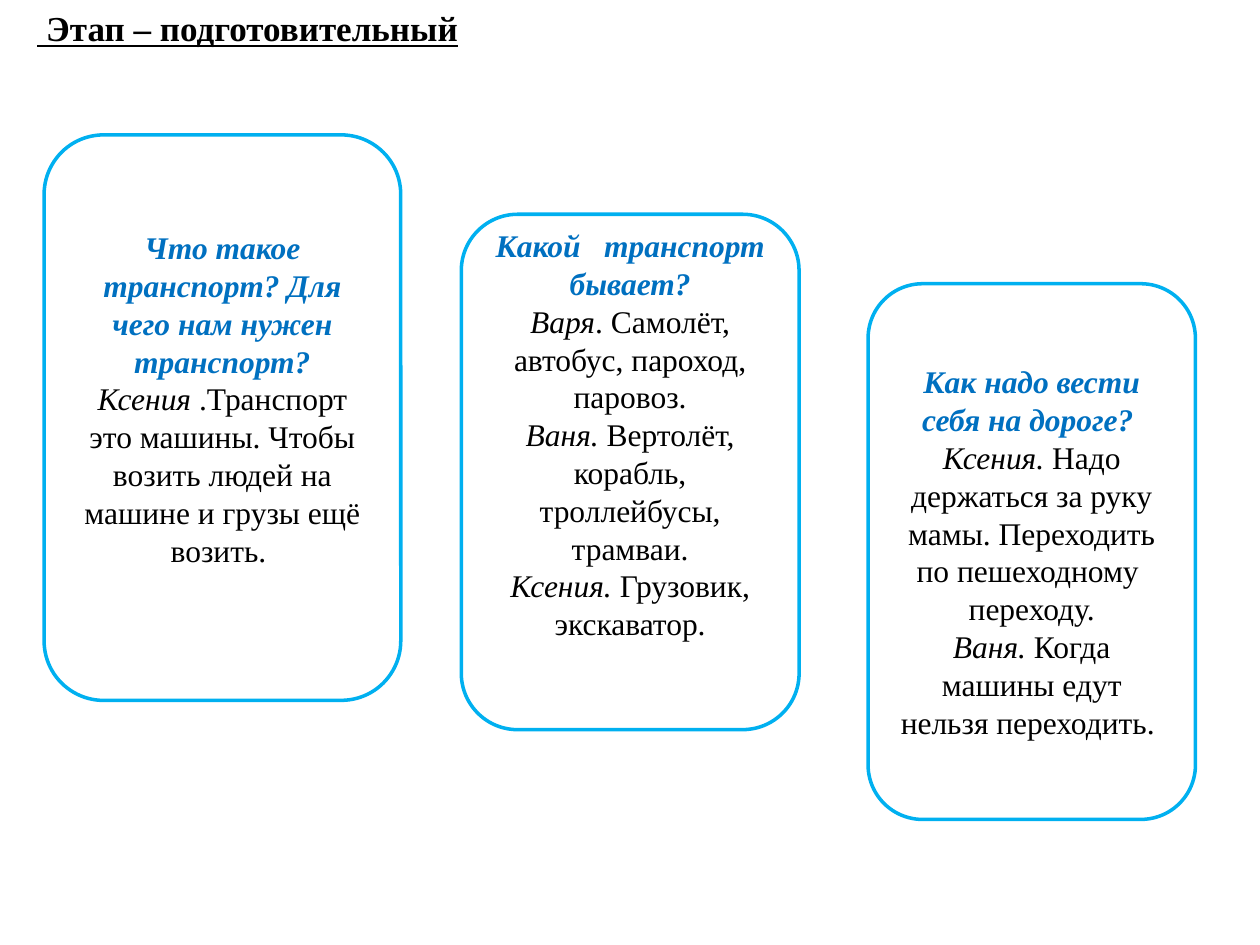
from pptx import Presentation
from pptx.dml.color import RGBColor
from pptx.enum.shapes import MSO_SHAPE
from pptx.enum.text import MSO_ANCHOR, MSO_AUTO_SIZE, PP_ALIGN
from pptx.util import Cm, Pt

ROUNDED = MSO_SHAPE.ROUNDED_RECTANGLE
MIDDLE = MSO_ANCHOR.MIDDLE
NO_AUTOFIT = MSO_AUTO_SIZE.NONE
LEFT, CENTER = PP_ALIGN.LEFT, PP_ALIGN.CENTER

THEME = {
    "font": "Times New Roman",
    "title_size": Pt(20),
    "body_size": Pt(18),
    "border_width": Pt(2),
    "text": RGBColor(0x00, 0x00, 0x00),
    "question": RGBColor(0x00, 0x70, 0xC0),
    "border": RGBColor(0x00, 0xB0, 0xF0),
    "card": RGBColor(0xFF, 0xFF, 0xFF),
}

# Each card: left, top, width, height, bottom inset (cm), question, answers
CARDS = [
    (0.89, 2.72, 7.19, 11.4, 0.9,
     "Что такое транспорт? Для чего нам нужен транспорт?",
     [("Ксения", " .Транспорт это машины. Чтобы возить людей на машине и грузы ещё возить. ")]),
    (9.3, 4.32, 6.81, 10.39, 1.65,
     "Какой   транспорт бывает?",
     [("Варя", ". Самолёт, автобус, пароход, паровоз."),
      ("Ваня.", " Вертолёт, корабль, троллейбусы, трамваи."),
      ("Ксения.", " Грузовик, экскаватор.")]),
    (17.5, 5.72, 6.6, 10.8, 0.13,
     "Как надо вести себя на дороге? ",
     [("Ксения. ", "Надо держаться за руку мамы. Переходить по пешеходному  переходу."),
      ("Ваня.", " Когда машины едут нельзя переходить. ")]),
]


def format_paragraph(paragraph, size, color, bold, align):
    paragraph.alignment = align
    font = paragraph.font
    font.name = THEME["font"]
    font.size = size
    font.bold = bold
    font.color.rgb = color


prs = Presentation()
prs.slide_width, prs.slide_height = Cm(25.4), Cm(19.05)
slide = prs.slides.add_slide(prs.slide_layouts[5])

# Stage title
stage = slide.shapes.title
stage.left, stage.top, stage.width, stage.height = Cm(0.5), Cm(0), Cm(18), Cm(1.12)
stage.text_frame.auto_size = NO_AUTOFIT
stage.text_frame.vertical_anchor = MIDDLE
stage.text_frame.text = " Этап – подготовительный"
heading = stage.text_frame.paragraphs[0]
format_paragraph(heading, THEME["title_size"], THEME["text"], True, LEFT)
heading.font.underline = True

# Question cards with the children's answers
for left, top, width, height, bottom_inset, question, answers in CARDS:
    card = slide.shapes.add_shape(ROUNDED, Cm(left), Cm(top), Cm(width), Cm(height))
    card.shadow.inherit = False
    card.fill.solid()
    card.fill.fore_color.rgb = THEME["card"]
    card.line.color.rgb = THEME["border"]
    card.line.width = THEME["border_width"]

    frame = card.text_frame
    frame.word_wrap = True
    frame.vertical_anchor = MIDDLE
    frame.margin_bottom = Cm(bottom_inset)

    frame.text = question
    question_line = frame.paragraphs[0]
    format_paragraph(question_line, THEME["body_size"], THEME["question"], True, CENTER)
    question_line.font.italic = True

    for child, speech in answers:
        answer = frame.add_paragraph()
        format_paragraph(answer, THEME["body_size"], THEME["text"], False, CENTER)
        for words, italic in ((child, True), (speech, False)):
            run = answer.add_run()
            run.text = words
            run.font.italic = italic

prs.save("out.pptx")
